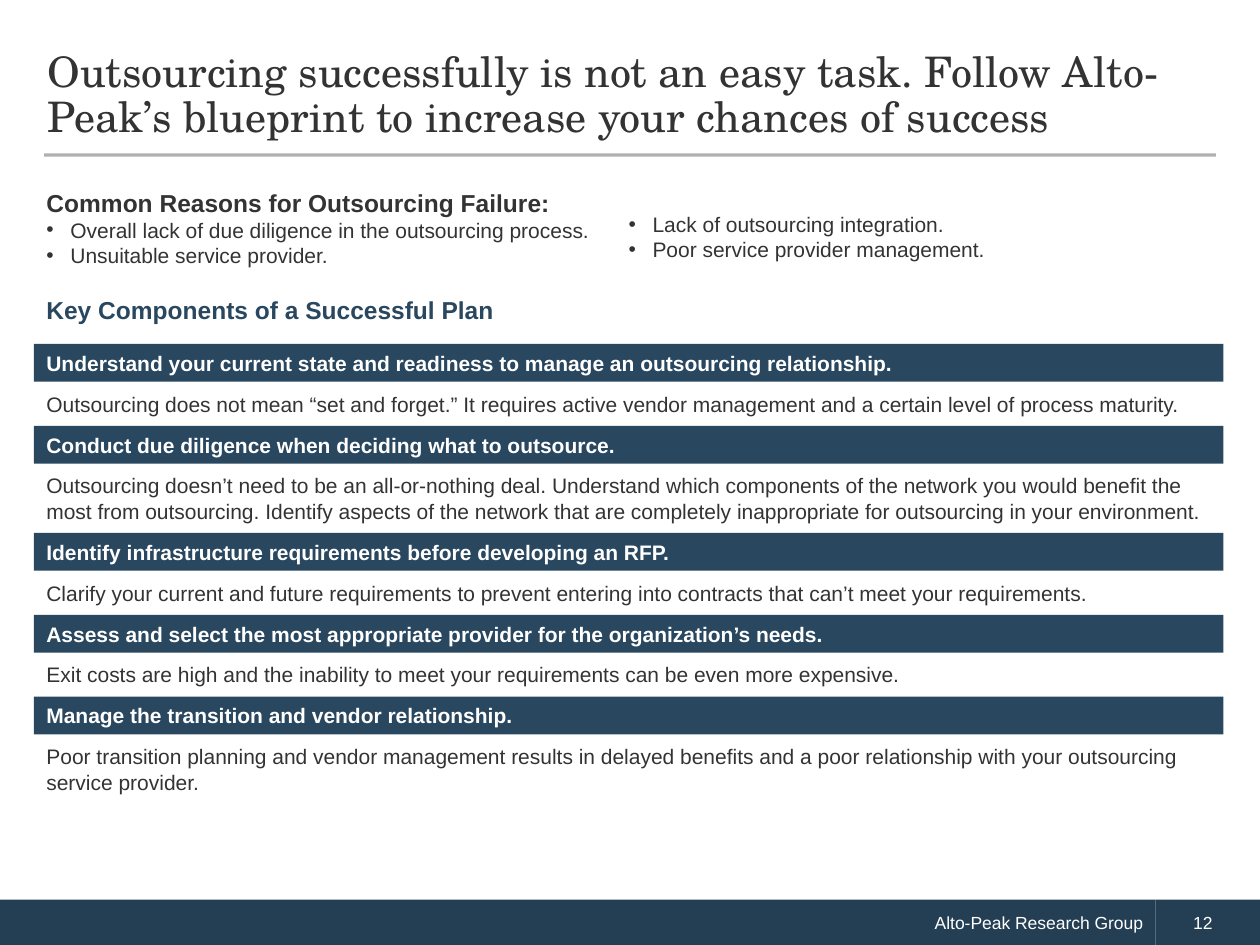
from dataclasses import dataclass

from lxml.etree import SubElement
from pptx import Presentation
from pptx.dml.color import RGBColor
from pptx.enum.shapes import MSO_CONNECTOR, MSO_SHAPE
from pptx.enum.text import MSO_ANCHOR, PP_ALIGN
from pptx.oxml.ns import qn
from pptx.util import Inches, Pt

WIDTH, HEIGHT = Inches(10), Inches(7.5)
COLS, ROWS = 100, 75
LEFT, WIDE = 2.7, 94.4
BAR, GAP, TOP = 3, 0.25, 27.3
INK, NAVY, DEEP, WHITE, GREY = "333333", "29475F", "243F54", "FFFFFF", "45433E"


@dataclass
class Box:
    """A place on the grid, in columns and rows."""
    x: float
    y: float
    w: float
    h: float


@dataclass
class Step:
    head: str
    body: str
    rows: float = 3


STEPS = [
    Step("Understand your current state and readiness to manage an outsourcing relationship.",
         "Outsourcing does not mean “set and forget.” It requires active vendor management "
         "and a certain level of process maturity."),
    Step("Conduct due diligence when deciding what to outsource.",
         "Outsourcing doesn’t need to be an all-or-nothing deal. Understand which components "
         "of the network you would benefit the most from outsourcing. Identify aspects of the "
         "network that are completely inappropriate for outsourcing in your environment.", 5),
    Step("Identify infrastructure requirements before developing an RFP.",
         "Clarify your current and future requirements to prevent entering into contracts "
         "that can’t meet your requirements."),
    Step("Assess and select the most appropriate provider for the organization’s needs.",
         "Exit costs are high and the inability to meet your requirements can be even "
         "more expensive."),
    Step("Manage the transition and vendor relationship.",
         "Poor transition planning and vendor management results in delayed benefits and a "
         "poor relationship with your outsourcing service provider.", 5),
]


def col(n: float) -> int:
    return round(WIDTH * n / COLS)


def row(n: float) -> int:
    return round(HEIGHT * n / ROWS)


def tint(color, code: str) -> None:
    color.rgb = RGBColor.from_string(code)


def place(box: Box) -> tuple[int, int, int, int]:
    return col(box.x), row(box.y), col(box.w), row(box.h)


def area(slide, box: Box):
    return slide.shapes.add_textbox(*place(box))


def band(slide, box: Box, code: str):
    shape = slide.shapes.add_shape(MSO_SHAPE.RECTANGLE, *place(box))
    shape.shadow.inherit = False
    shape.fill.solid()
    tint(shape.fill.fore_color, code)
    shape.line.fill.background()
    return shape


def write(shape, text: str, *, size=12, bold=False, code=INK, font="Arial", align=PP_ALIGN.LEFT,
          anchor=MSO_ANCHOR.TOP, lead=None, before=0, inset=1.0, dot=False, more=False) -> None:
    """Put one paragraph in a shape; with more, add it after those already there."""
    frame = shape.text_frame
    frame.word_wrap = True
    frame.vertical_anchor = anchor
    frame.margin_left = col(inset)
    para = frame.add_paragraph() if more else frame.paragraphs[0]
    para.alignment, para.space_before = align, Pt(before)
    if lead:
        para.line_spacing = Pt(lead)
    if dot:
        props = para._p.get_or_add_pPr()
        props.set("marL", str(col(1.9)))
        props.set("indent", str(-col(1.9)))
        SubElement(props, qn("a:buFont"), typeface="Arial")
        SubElement(props, qn("a:buChar"), char="•")
    run = para.add_run()
    run.text = text
    run.font.name, run.font.size, run.font.bold = font, Pt(size), bold
    tint(run.font.color, code)


def rule(slide, x: float, y: float, end: float) -> None:
    """Draw the faint line under the title."""
    line = slide.shapes.add_connector(MSO_CONNECTOR.STRAIGHT, col(x), row(y), col(end), row(y))
    line.line.width = Pt(1.75)
    tint(line.line.color, GREY)
    shade = line._element.spPr.find(".//" + qn("a:srgbClr"))
    SubElement(shade, qn("a:alpha"), val="42000")
    SubElement(line._element.spPr, qn("a:effectLst"))


def footer(slide) -> None:
    split, top = 91.7, 71.4
    name = band(slide, Box(0, top, split, ROWS - top), DEEP)
    write(name, "Alto-Peak Research Group", size=10, code=WHITE,
          align=PP_ALIGN.RIGHT, anchor=MSO_ANCHOR.MIDDLE)
    page = band(slide, Box(split, top, COLS - split, ROWS - top), DEEP)
    write(page, "12", size=10, code=WHITE, anchor=MSO_ANCHOR.MIDDLE, inset=3)


def header(slide) -> None:
    rule(slide, 3.5, 12.3, 96.5)
    title = area(slide, Box(2.8, 2.9, 94.3, 9.4))
    write(title, "Outsourcing successfully is not an easy task. Follow Alto-Peak’s blueprint "
          "to increase your chances of success", size=24, font="TeX Gyre Schola",
          anchor=MSO_ANCHOR.MIDDLE, lead=26)


def reasons(slide) -> None:
    half = WIDE / 2 - 1
    left = area(slide, Box(LEFT, 14.4, half, 8))
    write(left, "Common Reasons for Outsourcing Failure:", size=14, bold=True)
    for text in ("Overall lack of due diligence in the outsourcing process.",
                 "Unsuitable service provider."):
        write(left, text, dot=True, more=True)
    right = area(slide, Box(LEFT + half, 16.3, half, 6))
    write(right, "Lack of outsourcing integration.", dot=True)
    write(right, "Poor service provider management.", dot=True, more=True)


def plan(slide) -> None:
    label = area(slide, Box(LEFT, 22.9, WIDE, 3.5))
    write(label, "Key Components of a Successful Plan", size=14, bold=True, code=NAVY, before=5)
    y = TOP
    for step in STEPS:
        write(band(slide, Box(LEFT, y, WIDE, BAR), NAVY), step.head, bold=True, code=WHITE)
        y += BAR + GAP
        write(area(slide, Box(LEFT, y, WIDE, step.rows)), step.body)
        y += step.rows + GAP


def main() -> None:
    deck = Presentation()
    deck.slide_width, deck.slide_height = WIDTH, HEIGHT
    slide = deck.slides.add_slide(deck.slide_layouts[6])
    for part in (footer, header, reasons, plan):
        part(slide)
    deck.save("out.pptx")


if __name__ == "__main__":
    main()
